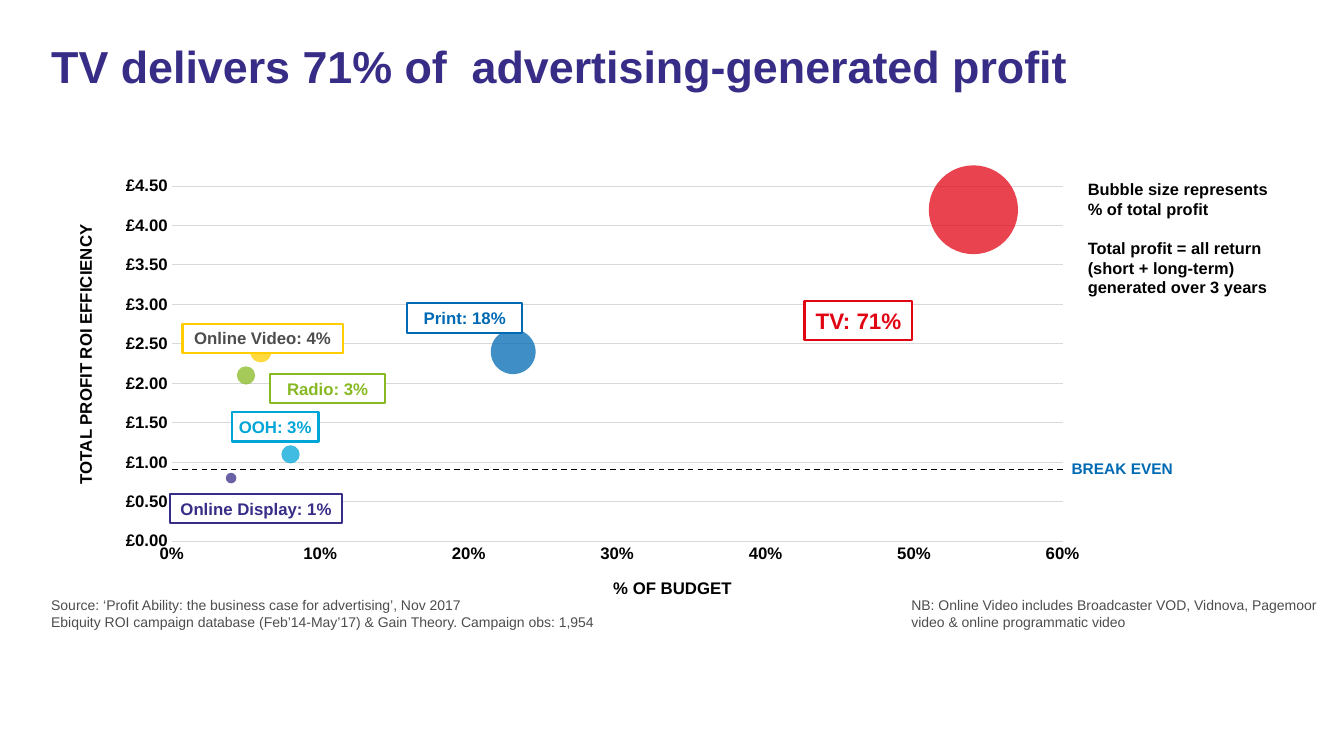
from dataclasses import dataclass

import pptx
import pptx.chart.data
import pptx.dml.color
import pptx.enum.chart
import pptx.enum.dml
import pptx.enum.shapes
import pptx.enum.text
import pptx.oxml
import pptx.oxml.ns
import pptx.slide
import pptx.text.text
import pptx.util

Inches = pptx.util.Inches
Pt = pptx.util.Pt
qn = pptx.oxml.ns.qn
Align = pptx.enum.text.PP_ALIGN

FONT = "Arial"
COLORS = {
    "purple": "372D87",
    "red": "E10514",
    "green": "87B923",
    "blue": "0069B4",
    "yellow": "FFCD00",
    "cyan": "00A5D7",
    "grey": "4D4D4D",
    "grid": "D9D9D9",
    "black": "000000",
    "white": "FFFFFF",
}
BUBBLE_OPACITY = 75
PLOT_AREA = {"x": 0.094, "y": 0.045, "w": 0.88, "h": 0.849}


@dataclass(frozen=True)
class Channel:
    """One medium: its bubble values and its label box."""
    label: str
    budget: float
    roi: float
    profit: float
    color: str
    box: tuple[float, float, float, float]
    text_color: str = ""
    size: float = 12


@dataclass(frozen=True)
class Caption:
    lines: tuple[str, ...]
    box: tuple[float, float, float, float]
    size: float
    color: str = "black"
    bold: bool = True
    align: Align = Align.LEFT
    rotation: float = 0
    line_spacing: float | pptx.util.Length = 1.0
    gap_before_second: float = 0


CHANNELS = (
    Channel("TV: 71%", 0.54, 4.2, 0.71, "red", (7.98, 2.99, 1.07, 0.38), size=16),
    Channel("Radio: 3%", 0.05, 2.1, 0.03, "green", (2.68, 3.71, 1.14, 0.29)),
    Channel("Print: 18%", 0.23, 2.4, 0.18, "blue", (4.04, 3.01, 1.14, 0.29)),
    Channel("Online Video: 4%", 0.06, 2.4, 0.04, "yellow", (1.81, 3.21, 1.59, 0.29), "grey"),
    Channel("Online Display: 1%", 0.04, 0.8, 0.01, "purple", (1.69, 4.9, 1.7, 0.29)),
    Channel("OOH: 3%", 0.08, 1.1, 0.03, "cyan", (2.3, 4.09, 0.86, 0.29)),
)

CAPTIONS = (
    Caption(("TV delivers 71% of  advertising-generated profit",),
            (0.41, 0.39, 12.4, 1.12), 32, "purple", line_spacing=0.9),
    Caption(("Source: ‘Profit Ability: the business case for advertising’, Nov 2017",
             "Ebiquity ROI campaign database (Feb’14-May’17) & Gain Theory. Campaign obs: 1,954"),
            (0.41, 5.87, 8.4, 0.45), 10, "grey", bold=False),
    Caption(("Bubble size represents % of total profit",
             "Total profit = all return (short + long-term)",
             "generated over 3 years"),
            (10.69, 1.73, 2.11, 1.77), 11.7, line_spacing=Pt(14), gap_before_second=14),
    Caption(("% OF BUDGET",), (4.66, 5.68, 4.02, 0.39), 12, align=Align.CENTER),
    Caption(("TOTAL PROFIT ROI EFFICIENCY",), (-1.18, 3.32, 4.14, 0.39), 12,
            align=Align.CENTER, rotation=270),
    Caption(("BREAK EVEN",), (10.53, 4.51, 1.39, 0.31), 11, "blue"),
    Caption(("NB: Online Video includes Broadcaster VOD, Vidnova, Pagemoor "
             "video & online programmatic video",),
            (8.94, 5.87, 4.39, 0.68), 10, "grey", bold=False),
)


def rgb(name: str) -> pptx.dml.color.RGBColor:
    return pptx.dml.color.RGBColor.from_string(COLORS[name])


def set_font(font: pptx.text.text.Font, size: float, color: str, bold: bool = True) -> None:
    font.name = FONT
    font.size = Pt(size)
    font.bold = bold
    font.color.rgb = rgb(color)


def add_caption(page: pptx.slide.Slide, caption: Caption) -> None:
    box = page.shapes.add_textbox(*map(Inches, caption.box))
    box.rotation = caption.rotation
    frame = box.text_frame
    frame.word_wrap = True
    frame.text = "\n".join(caption.lines)
    for index, para in enumerate(frame.paragraphs):
        para.alignment = caption.align
        para.line_spacing = caption.line_spacing
        if index == 1 and caption.gap_before_second:
            para.space_before = Pt(caption.gap_before_second)
        set_font(para.font, caption.size, caption.color, caption.bold)


def add_white_box(page: pptx.slide.Slide, box: tuple[float, float, float, float]):
    shape = page.shapes.add_shape(pptx.enum.shapes.MSO_SHAPE.RECTANGLE, *map(Inches, box))
    shape.shadow.inherit = False
    shape.fill.solid()
    shape.fill.fore_color.rgb = rgb("white")
    shape.line.fill.background()
    return shape


def add_label(page: pptx.slide.Slide, channel: Channel) -> None:
    shape = add_white_box(page, channel.box)
    shape.line.color.rgb = rgb(channel.color)
    shape.line.width = Pt(1.5)
    frame = shape.text_frame
    frame.margin_left = frame.margin_right = 0
    frame.vertical_anchor = pptx.enum.text.MSO_ANCHOR.MIDDLE
    frame.text = channel.label
    para = frame.paragraphs[0]
    para.alignment = Align.CENTER
    set_font(para.font, channel.size, channel.text_color or channel.color)


def fill_translucent(fill, color: str) -> None:
    fill.solid()
    fill.fore_color.rgb = rgb(color)
    for node in fill._xPr.iter(qn("a:srgbClr")):
        node.append(pptx.oxml.parse_xml(
            f'<a:alpha {pptx.oxml.ns.nsdecls("a")} val="{BUBBLE_OPACITY * 1000}"/>'))


def fix_plot_area(chart) -> None:
    area = chart._chartSpace.chart.plotArea
    for layout in area.findall(qn("c:layout")):
        area.remove(layout)
    modes = '<c:layoutTarget val="inner"/><c:xMode val="edge"/><c:yMode val="edge"/>'
    sizes = "".join(f'<c:{key} val="{value}"/>' for key, value in PLOT_AREA.items())
    area.insert(0, pptx.oxml.parse_xml(
        f'<c:layout {pptx.oxml.ns.nsdecls("c")}>'
        f"<c:manualLayout>{modes}{sizes}</c:manualLayout></c:layout>"))


def style_axis(axis, maximum: float, step: float, number_format: str) -> None:
    axis.minimum_scale = 0
    axis.maximum_scale = maximum
    axis.major_unit = step
    axis.major_tick_mark = axis.minor_tick_mark = pptx.enum.chart.XL_TICK_MARK.NONE
    axis.format.line.fill.background()
    axis.tick_labels.number_format = number_format
    axis.tick_labels.number_format_is_linked = False
    set_font(axis.tick_labels.font, 12, "black")


def add_bubble_chart(page: pptx.slide.Slide) -> None:
    data = pptx.chart.data.BubbleChartData()
    bubbles = data.add_series("Series 1")
    for channel in CHANNELS:
        bubbles.add_data_point(channel.budget, channel.roi, channel.profit)
    chart = page.shapes.add_chart(
        pptx.enum.chart.XL_CHART_TYPE.BUBBLE,
        *map(Inches, (0.76, 1.64, 10.04, 4.17)), data).chart
    chart.has_title = chart.has_legend = False
    set_font(chart.font, 10, "black", bold=False)
    fix_plot_area(chart)

    style_axis(chart.category_axis, 0.6, 0.1, "0%")
    style_axis(chart.value_axis, 4.5, 0.5, '"£"0.00')
    chart.category_axis.has_major_gridlines = False
    chart.value_axis.has_major_gridlines = True
    gridline = chart.value_axis.major_gridlines.format.line
    gridline.color.rgb = rgb("grid")
    gridline.width = Pt(0.75)

    series = chart.plots[0].series[0]
    fill_translucent(series.format.fill, "purple")
    for index, channel in enumerate(CHANNELS):
        look = series.points[index].format
        fill_translucent(look.fill, channel.color)
        look.line.fill.background()


def add_break_even_line(page: pptx.slide.Slide) -> None:
    add_white_box(page, (1.59, 4.64, 9.46, 0.02))
    line = page.shapes.add_connector(
        pptx.enum.shapes.MSO_CONNECTOR.STRAIGHT, *map(Inches, (1.71, 4.66, 10.55, 4.66)))
    line.line.color.rgb = rgb("black")
    line.line.width = Pt(1)
    line.line.dash_style = pptx.enum.dml.MSO_LINE.DASH
    line._element.spPr.append(pptx.oxml.parse_xml(
        f'<a:effectLst {pptx.oxml.ns.nsdecls("a")}/>'))


def main() -> None:
    deck = pptx.Presentation()
    deck.slide_width, deck.slide_height = Inches(13.33), Inches(7.5)
    page = deck.slides.add_slide(deck.slide_layouts[6])
    add_bubble_chart(page)
    add_break_even_line(page)
    for channel in CHANNELS:
        add_label(page, channel)
    for caption in CAPTIONS:
        add_caption(page, caption)
    deck.save("out.pptx")


if __name__ == "__main__":
    main()
